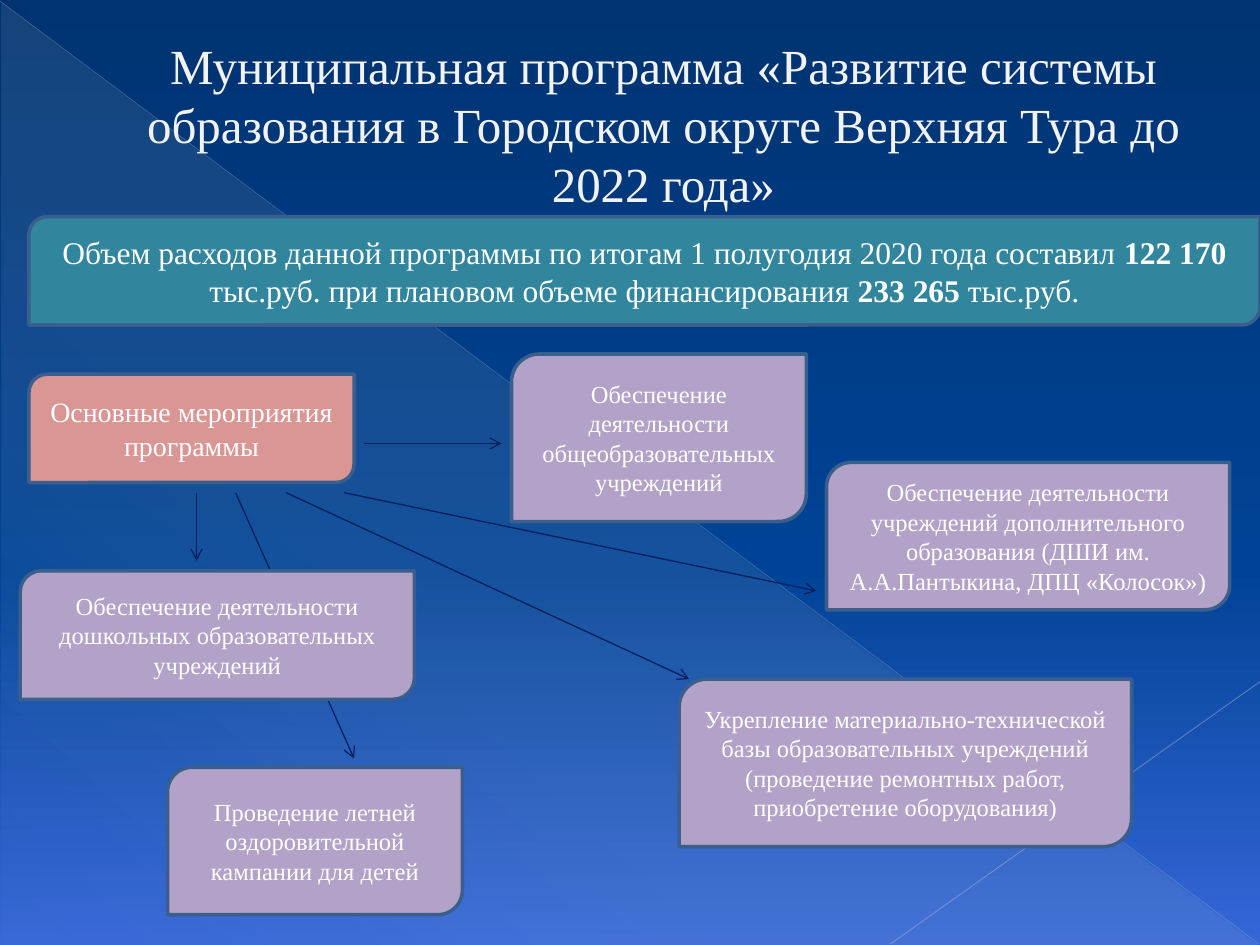
from lxml import etree
from pptx import Presentation
from pptx.dml.color import RGBColor
from pptx.enum.shapes import MSO_CONNECTOR, MSO_SHAPE
from pptx.enum.text import MSO_ANCHOR, PP_ALIGN
from pptx.oxml.ns import qn
from pptx.util import Inches, Pt

CARD_SHAPE = MSO_SHAPE.ROUND_2_DIAG_RECTANGLE
TRIANGLE = MSO_SHAPE.RIGHT_TRIANGLE
STRAIGHT = MSO_CONNECTOR.STRAIGHT
CENTER = PP_ALIGN.CENTER
MIDDLE = MSO_ANCHOR.MIDDLE

FONT_NAME = "Times New Roman"
WHITE = RGBColor(0xFF, 0xFF, 0xFF)
TITLE_COLOR = RGBColor(0xF2, 0xF2, 0xF2)
TITLE_OUTLINE = RGBColor(0x37, 0x59, 0x83)
NAVY = RGBColor(0x00, 0x33, 0x71)
BLUE = RGBColor(0x00, 0x43, 0x96)
LIGHT_BLUE = RGBColor(0x35, 0x66, 0xD7)
CREAM = RGBColor(0xEE, 0xEC, 0xE1)
DIAGONAL = RGBColor(0xAD, 0xB6, 0xCE)
SHORT_DIAGONAL = RGBColor(0xB6, 0xBE, 0xD3)
ARROW = RGBColor(0x00, 0x20, 0x60)
BORDER = RGBColor(0x3A, 0x5F, 0x8C)
TEAL = RGBColor(0x31, 0x85, 0x9C)
ROSE = RGBColor(0xD9, 0x96, 0x94)
LILAC = RGBColor(0xB3, 0xA2, 0xC7)

TITLE = "Муниципальная программа «Развитие системы образования в Городском округе Верхняя Тура до 2022 года»"
EXPENSES = [
    ("Объем расходов данной программы по итогам 1 полугодия 2020 года составил ", False),
    ("122 170 ", True),
    ("тыс.руб. при плановом объеме финансирования ", False),
    ("233 265 ", True),
    ("тыс.руб.", False),
]
ACTIVITIES = [
    ((0.16, 4.53, 3.13, 1.02),
     "Обеспечение деятельности дошкольных образовательных учреждений"),
    ((4.06, 2.81, 2.34, 1.33),
     "Обеспечение деятельности общеобразовательных учреждений"),
    ((6.56, 3.67, 3.2, 1.17),
     "Обеспечение деятельности учреждений дополнительного образования (ДШИ им. А.А.Пантыкина, ДПЦ «Колосок»)"),
    ((1.33, 6.09, 2.34, 1.17),
     "Проведение летней оздоровительной кампании для детей"),
    ((5.39, 5.39, 3.59, 1.33),
     "Укрепление материально-технической базы образовательных учреждений (проведение ремонтных работ, приобретение оборудования)"),
]
SUMMER_ARROW = ((1.87, 3.91), (2.81, 6.02))
ACTIVITY_ARROWS = [
    ((1.56, 3.91), (1.56, 4.45)),
    ((2.89, 3.52), (3.98, 3.52)),
    ((2.73, 3.91), (6.48, 4.69)),
    ((2.27, 3.91), (5.47, 5.39)),
]


def add_color(parent, color, opacity=100):
    color_node = etree.SubElement(parent, qn("a:srgbClr"), val=str(color))
    if opacity < 100:
        etree.SubElement(color_node, qn("a:alpha"), val=str(opacity * 1000))


def set_gradient(fill, owner, stops, angle):
    fill.gradient()
    gradient = owner.find(".//" + qn("a:gradFill"))
    for child in list(gradient):
        gradient.remove(child)
    stop_list = etree.SubElement(gradient, qn("a:gsLst"))
    for position, color, opacity in stops:
        stop = etree.SubElement(stop_list, qn("a:gs"), pos=str(position * 1000))
        add_color(stop, color, opacity)
    etree.SubElement(gradient, qn("a:lin"), ang=str(angle * 60000), scaled="0")


def add_line(slide, start, end, color, width, opacity=100):
    line = slide.shapes.add_connector(STRAIGHT, *map(Inches, start + end))
    line.line.width = Pt(width)
    line.line.color.rgb = color
    if opacity < 100:
        color_node = line.line._get_or_add_ln().find(".//" + qn("a:srgbClr"))
        etree.SubElement(color_node, qn("a:alpha"), val=str(opacity * 1000))
    etree.SubElement(line._element.spPr, qn("a:effectLst"))
    return line


def add_arrow(slide, start, end):
    arrow = add_line(slide, start, end, ARROW, 0.75)
    etree.SubElement(arrow.line._get_or_add_ln(), qn("a:tailEnd"), type="arrow")


def write_text(shape, pieces, size, color=WHITE):
    frame = shape.text_frame
    frame_format = {"word_wrap": True, "vertical_anchor": MIDDLE,
                    "margin_top": 0, "margin_bottom": 0}
    for attribute, value in frame_format.items():
        setattr(frame, attribute, value)
    paragraph = frame.paragraphs[0]
    paragraph.alignment = CENTER
    for text, bold in pieces:
        run = paragraph.add_run()
        run.text = text
        font_format = {"name": FONT_NAME, "size": Pt(size), "bold": bold}
        for attribute, value in font_format.items():
            setattr(run.font, attribute, value)
        run.font.color.rgb = color
    return paragraph


def add_card(slide, box, pieces, fill_color, size):
    card = slide.shapes.add_shape(CARD_SHAPE, *map(Inches, box))
    card.shadow.inherit = False
    card.fill.solid()
    card.fill.fore_color.rgb = fill_color
    card.line.color.rgb = BORDER
    card.line.width = Pt(2)
    write_text(card, pieces, size)


def add_title(slide):
    title = slide.shapes.add_textbox(*map(Inches, (0.5, 0.22, 9, 1.53)))
    paragraph = write_text(title, [(TITLE, False)], 28, TITLE_COLOR)
    paragraph._p.get_or_add_pPr().set("marL", str(Inches(0.53)))
    outline = etree.Element(qn("a:ln"), w=str(Pt(0.5)))
    add_color(etree.SubElement(outline, qn("a:solidFill")), TITLE_OUTLINE)
    paragraph.runs[0].font._element.insert(0, outline)


def add_backdrop(slide):
    set_gradient(slide.background.fill, slide.element,
                 [(0, NAVY, 100), (60, BLUE, 100), (100, LIGHT_BLUE, 100)], 90)
    glow = slide.shapes.add_shape(TRIANGLE, *map(Inches, (0.01, 0.02, 9.98, 7.48)))
    glow.shadow.inherit = False
    glow.line.fill.background()
    set_gradient(glow.fill, glow._element,
                 [(0, CREAM, 10), (70, CREAM, 8), (100, CREAM, 1)], 133)
    add_line(slide, (0, 0.01), (9.99, 7.49), DIAGONAL, 0.39, 35)
    add_line(slide, (10, 5.41), (7.07, 7.49), SHORT_DIAGONAL, 0.47, 45)


def main():
    presentation = Presentation()
    presentation.slide_width = Inches(10)
    presentation.slide_height = Inches(7.5)
    slide = presentation.slides.add_slide(presentation.slide_layouts[6])
    add_backdrop(slide)
    add_arrow(slide, *SUMMER_ARROW)
    add_title(slide)
    add_card(slide, (0.23, 2.97, 2.58, 0.86),
             [("Основные мероприятия программы", False)], ROSE, 16)
    add_card(slide, (0.23, 1.72, 9.77, 0.86), EXPENSES, TEAL, 18)
    for box, activity in ACTIVITIES:
        add_card(slide, box, [(activity, False)], LILAC, 14)
    for start, end in ACTIVITY_ARROWS:
        add_arrow(slide, start, end)
    presentation.save("out.pptx")


if __name__ == "__main__":
    main()
